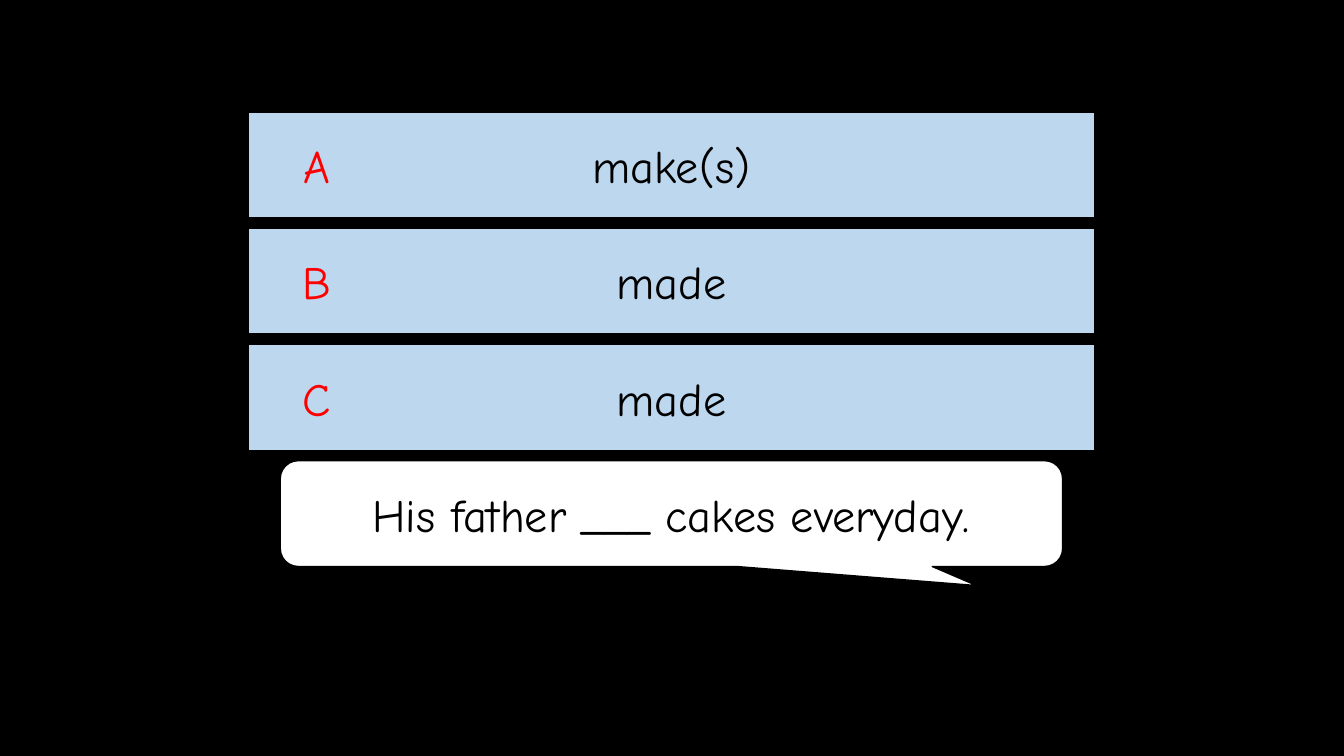
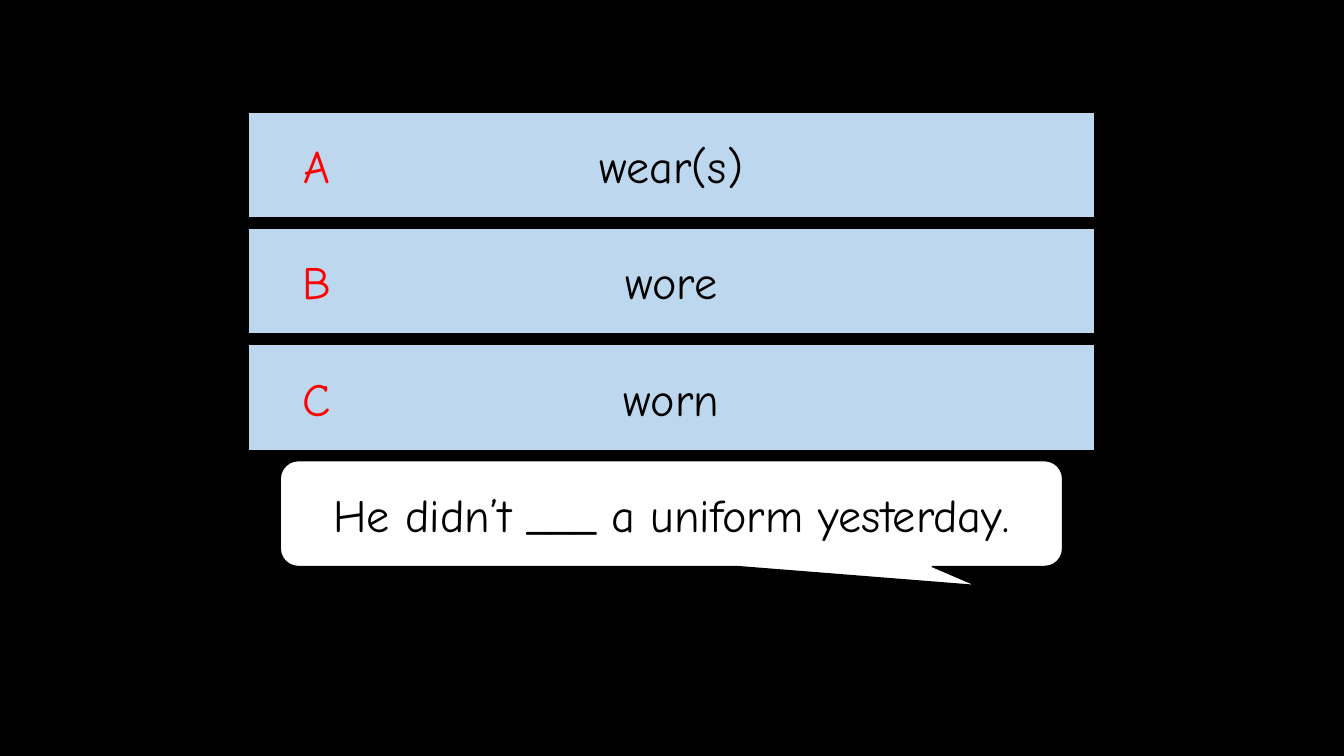
from dataclasses import dataclass

from pptx import Presentation
from pptx.dml.color import RGBColor
from pptx.enum import shapes, text
from pptx.util import Inches, Pt

# Shared style
FONT = "Comic Neue"
FONT_SIZE = 33
BLACK, WHITE, BLUE, RED = "000000", "FFFFFF", "BDD7EE", "FF0000"

# Shared layout, in inches
BAR_LEFT, BAR_WIDTH, BAR_HEIGHT = 2.46, 8.4, 1.05
FIRST_TOP, LAST_TOP = 1.11, 3.42
LETTERS = "ABC"
PITCH = (LAST_TOP - FIRST_TOP) / (len(LETTERS) - 1)
LETTER_LEFT, LETTER_WIDTH, LETTER_HEIGHT = 2.7, 0.89, 0.73
BUBBLE_LEFT, BUBBLE_TOP, BUBBLE_WIDTH = 2.78, 4.57, 7.76
BUBBLE_ADJUSTMENTS = (0.39, 0.68, 0.17)


@dataclass(frozen=True)
class Question:
    sentence: str
    answers: tuple[str, str, str]


QUESTIONS = (
    Question("His father ___ cakes everyday.", ("make(s)", "made", "made")),
    Question("He didn’t ___ a uniform yesterday.", ("wear(s)", "wore", "worn")),
)


def paint(fill, colour: str) -> None:
    fill.solid()
    fill.fore_color.rgb = RGBColor.from_string(colour)


def write(box, wording: str, colour: str = BLACK) -> None:
    frame = box.text_frame
    frame.text = wording
    frame.word_wrap = True
    frame.vertical_anchor = text.MSO_ANCHOR.MIDDLE
    para = frame.paragraphs[0]
    para.alignment = text.PP_ALIGN.CENTER
    font = para.runs[0].font
    font.name = FONT
    font.size = Pt(FONT_SIZE)
    paint(font.fill, colour)


def add_panel(page, kind, left: float, top: float, width: float,
              colour: str, wording: str):
    panel = page.shapes.add_shape(
        kind, Inches(left), Inches(top), Inches(width), Inches(BAR_HEIGHT))
    panel.shadow.inherit = False
    paint(panel.fill, colour)
    paint(panel.line.fill, BLACK)
    panel.line.width = Pt(1)
    write(panel, wording)
    return panel


def add_letter(page, top: float, letter: str) -> None:
    box = page.shapes.add_textbox(
        Inches(LETTER_LEFT), Inches(top),
        Inches(LETTER_WIDTH), Inches(LETTER_HEIGHT))
    write(box, letter, RED)


def add_question(deck, question: Question) -> None:
    page = deck.slides.add_slide(deck.slide_layouts[6])

    # Speech bubble with the sentence
    bubble = add_panel(page, shapes.MSO_SHAPE.ROUNDED_RECTANGULAR_CALLOUT,
                       BUBBLE_LEFT, BUBBLE_TOP, BUBBLE_WIDTH,
                       WHITE, question.sentence)
    for index, value in enumerate(BUBBLE_ADJUSTMENTS):
        bubble.adjustments[index] = value

    # Answer bars, each with its letter centred in height
    for row, (letter, answer) in enumerate(zip(LETTERS, question.answers)):
        top = FIRST_TOP + row * PITCH
        add_panel(page, shapes.MSO_SHAPE.RECTANGLE,
                  BAR_LEFT, top, BAR_WIDTH, BLUE, answer)
        add_letter(page, top + (BAR_HEIGHT - LETTER_HEIGHT) / 2, letter)


def main() -> None:
    deck = Presentation()
    deck.slide_width, deck.slide_height = Inches(13.33), Inches(7.5)
    paint(deck.slide_master.background.fill, BLACK)
    for question in QUESTIONS:
        add_question(deck, question)
    deck.save("out.pptx")


if __name__ == "__main__":
    main()
